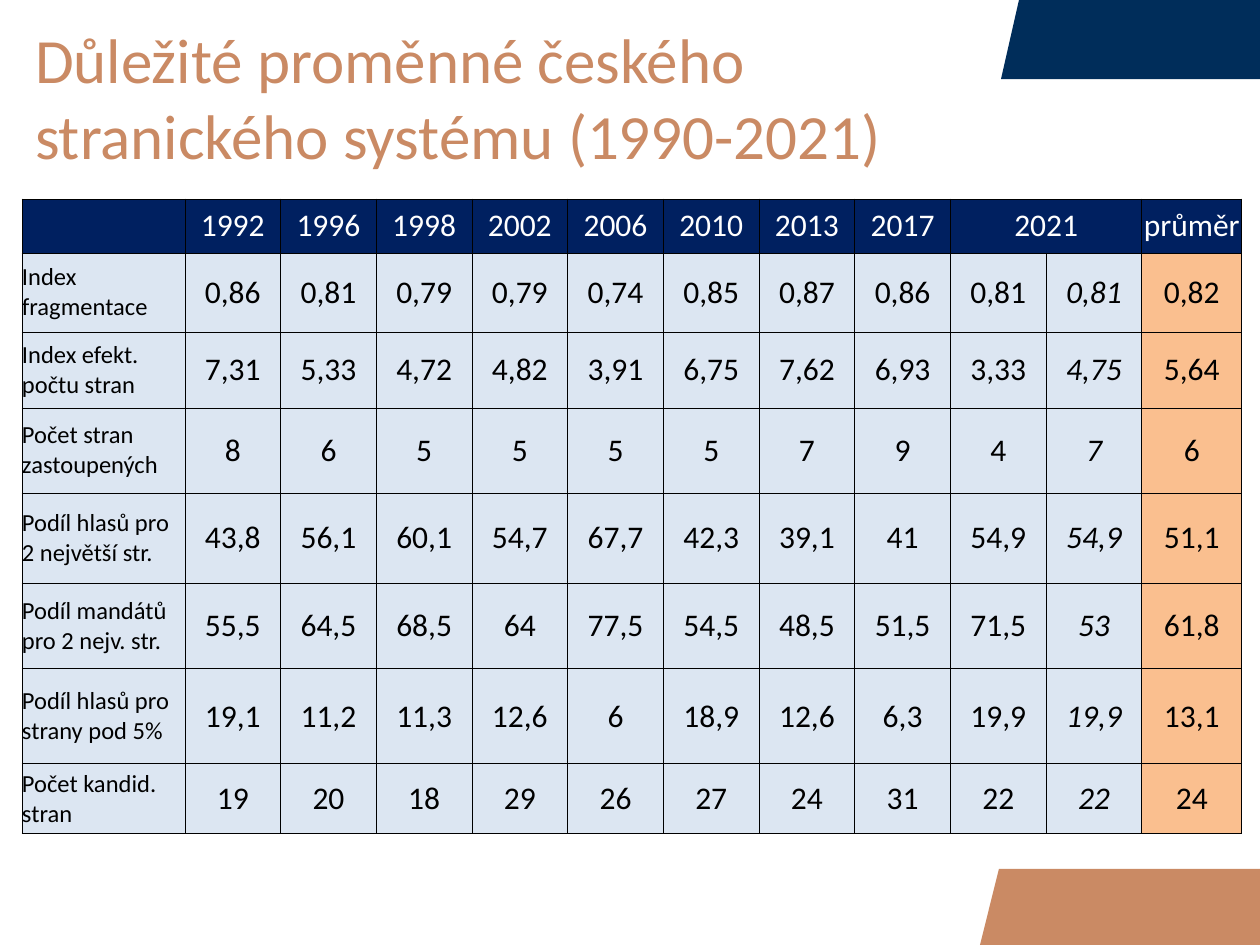
"""Build a slide with a table of Czech party system variables, 1990-2021."""
from lxml import etree
from pptx import Presentation
from pptx import util as u
from pptx.dml.color import RGBColor
from pptx.enum import text
from pptx.oxml.ns import qn

SCALE = 914400 / 126
FONT = "Calibri"
NAVY, COPPER = "002D5A", "CA8A64"
HEADER_FILL, BODY_FILL, MEAN_FILL = "002060", "DCE6F2", "FABF8F"
WHITE, BLACK = "FFFFFF", "000000"


def px(n):
    return u.Emu(round(n * SCALE))


def rgb(value):
    return RGBColor.from_string(value)


prs = Presentation()
prs.slide_width, prs.slide_height = px(1260), px(945)
s = prs.slides.add_slide(prs.slide_layouts[5])

title = s.shapes.title
title.left, title.top, title.width, title.height = px(0), px(33), px(1260), px(127)
tf = title.text_frame
tf.auto_size = text.MSO_AUTO_SIZE.NONE
tf.word_wrap = True
tf.vertical_anchor = text.MSO_ANCHOR.MIDDLE
tf.margin_left = tf.margin_right = px(35)
tf.margin_top = tf.margin_bottom = px(6)
p = tf.paragraphs[0]
p.text = "Důležité proměnné českého \vstranického systému (1990-2021)"
p.alignment = text.PP_ALIGN.LEFT
p.font.name, p.font.size = FONT, u.Pt(36)
p.font.color.rgb = rgb(COPPER)

corners = [
    (NAVY, [(1001, 79), (1019, 0), (1260, 0), (1260, 79)]),
    (COPPER, [(980, 945), (999, 869), (1260, 869), (1260, 945)]),
]
for color, points in corners:
    builder = s.shapes.build_freeform(*points[0], scale=SCALE)
    builder.add_line_segments(points[1:], close=True)
    sp = builder.convert_to_shape()
    sp.shadow.inherit = False
    sp.fill.solid()
    sp.fill.fore_color.rgb = rgb(color)
    sp.line.fill.background()
    title.element.addprevious(sp.element)

rows = [
    ["", "1992", "1996", "1998", "2002", "2006", "2010", "2013", "2017", "2021", "", "průměr"],
    ["Index fragmentace", "0,86", "0,81", "0,79", "0,79", "0,74", "0,85", "0,87", "0,86", "0,81", "0,81", "0,82"],
    ["Index efekt. počtu stran", "7,31", "5,33", "4,72", "4,82", "3,91", "6,75", "7,62", "6,93", "3,33", "4,75", "5,64"],
    ["Počet stran zastoupených", "8", "6", "5", "5", "5", "5", "7", "9", "4", "7", "6"],
    ["Podíl hlasů pro 2 největší str.", "43,8", "56,1", "60,1", "54,7", "67,7", "42,3", "39,1", "41", "54,9", "54,9", "51,1"],
    ["Podíl mandátů pro 2 nejv. str.", "55,5", "64,5", "68,5", "64", "77,5", "54,5", "48,5", "51,5", "71,5", "53", "61,8"],
    ["Podíl hlasů pro strany pod 5%", "19,1", "11,2", "11,3", "12,6", "6", "18,9", "12,6", "6,3", "19,9", "19,9", "13,1"],
    ["Počet kandid. stran", "19", "20", "18", "29", "26", "27", "24", "31", "22", "22", "24"],
]
row_heights = [54, 79, 76, 85, 90, 86, 95, 70]
label_width, years_width, mean_width = 163, 957, 100
table_width = label_width + years_width + mean_width
mean_col = len(rows[0]) - 1
italic_col = mean_col - 1
year_cols = mean_col - 1

frame = s.shapes.add_table(
    len(rows), len(rows[0]), px(22), px(199), px(table_width), px(sum(row_heights))
)
table = frame.table
table.first_row = table.horz_banding = False
for row, height in zip(table.rows, row_heights):
    row.height = px(height)
for column in table.columns:
    column.width = px(years_width) // year_cols
table.columns[0].width = px(label_width)
table.columns[mean_col].width = px(mean_width)

for i, values in enumerate(rows):
    for j, value in enumerate(values):
        is_header = i == 0
        is_label = j == 0 and not is_header
        if is_header:
            fill = HEADER_FILL
        elif j == mean_col:
            fill = MEAN_FILL
        else:
            fill = BODY_FILL

        cell = table.cell(i, j)
        cell.margin_left = cell.margin_right = cell.margin_top = cell.margin_bottom = 0
        cell.vertical_anchor = text.MSO_ANCHOR.MIDDLE
        cell.fill.solid()
        cell.fill.fore_color.rgb = rgb(fill)
        p = cell.text_frame.paragraphs[0]
        p.text = value
        p.alignment = text.PP_ALIGN.LEFT if is_label else text.PP_ALIGN.CENTER
        p.font.name = FONT
        p.font.size = u.Pt(14 if is_label else 18)
        p.font.italic = j == italic_col and not is_header
        p.font.color.rgb = rgb(WHITE if is_header else BLACK)

table.cell(0, italic_col - 1).merge(table.cell(0, italic_col))

for tc_pr in list(frame.element.iter(qn("a:tcPr"))):
    for position, side in enumerate(("a:lnL", "a:lnR", "a:lnT", "a:lnB")):
        border = etree.Element(qn(side), w=str(u.Pt(0.5)))
        solid = etree.SubElement(border, qn("a:solidFill"))
        etree.SubElement(solid, qn("a:srgbClr"), val=BLACK)
        tc_pr.insert(position, border)

prs.save("out.pptx")
